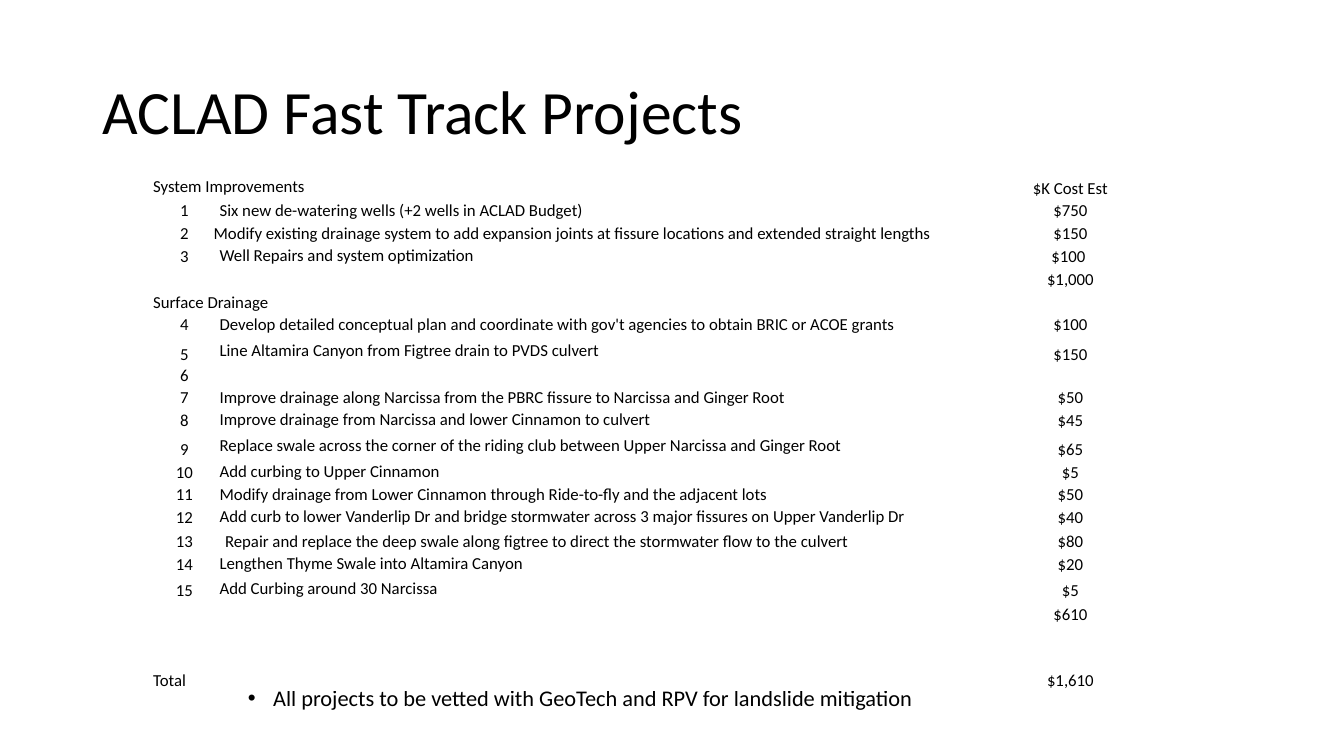
from lxml import etree
from pptx import Presentation
from pptx.dml.color import RGBColor
from pptx.enum.text import MSO_ANCHOR, MSO_AUTO_SIZE, PP_ALIGN
from pptx.oxml import parse_xml
from pptx.oxml.ns import nsdecls, qn
from pptx.util import Pt

LEFT, CENTER = PP_ALIGN.LEFT, PP_ALIGN.CENTER
TOP, MIDDLE, BOTTOM = MSO_ANCHOR.TOP, MSO_ANCHOR.MIDDLE, MSO_ANCHOR.BOTTOM
NO_AUTOFIT = MSO_AUTO_SIZE.NONE

COLUMN_WIDTHS = [13.7, 18.7, 584.6, 77.8]
INDENT = 15.8
EDGE = 0.7

# Each row: height, heading, number, project, cost
ROWS = [
    (17.3, "System Improvements", "", "", "$K Cost Est"),
    (16.3, "", "1", "Six new de-watering wells (+2 wells in ACLAD Budget)", "$750"),
    (16.3, "", "2", "Modify existing drainage system to add expansion joints at fissure "
                    "locations and extended straight lengths", "$150"),
    (16.4, "", "3", "Well Repairs and system optimization", "$100 "),
    (16.4, "", "", "", "$1,000"),
    (16.4, "Surface Drainage", "", "", ""),
    (15.8, "", "4", "Develop detailed conceptual plan and coordinate with gov't agencies "
                    "to obtain BRIC or ACOE grants", "$100"),
    (21.2, "", "5", "Line Altamira Canyon from Figtree drain to PVDS culvert", "$150"),
    (15.2, "", "6", "", ""),
    (15.9, "", "7", "Improve drainage along Narcissa from the PBRC fissure to Narcissa "
                    "and Ginger Root", "$50"),
    (15.9, "", "8", "Improve drainage from Narcissa and lower Cinnamon to culvert", "$45"),
    (21.2, "", "9", "Replace swale across the corner of the riding club between Upper "
                    "Narcissa and Ginger Root", "$65"),
    (16.2, "", "10", "Add curbing to Upper Cinnamon", "$5"),
    (16, "", "11", "Modify drainage from Lower Cinnamon through Ride-to-fly and the "
                   "adjacent lots", "$50"),
    (16.2, "", "12", "Add curb to lower Vanderlip Dr and bridge stormwater across 3 major "
                     "fissures on Upper Vanderlip Dr", "$40"),
    (17, "", "13", "Repair and replace the deep swale along figtree to direct the "
                   "stormwater flow to the culvert", "$80"),
    (16.4, "", "14", "Lengthen Thyme Swale into Altamira Canyon", "$20"),
    (19.1, "", "15", "Add Curbing around 30 Narcissa", "$5"),
    (16.8, "", "", "", "$610"),
    (32, "", "", "", ""),
    (15.2, "Total", "", "", "$1,610"),
]
HEADING_SPANS = {"System Improvements": 3, "Surface Drainage": 3, "Total": 2}
# Projects set on the bottom of the row with an indent of their own
OWN_INDENTS = {"2": 11.5, "13": 19.7}


def color(hex_string):
    return RGBColor.from_string(hex_string)


class ProjectSlide:
    font = "Calibri"
    ink = "000000"
    paper = "FFFFFF"

    def __init__(self, deck):
        self.page = deck.slides.add_slide(deck.slide_layouts[5])

    def add_text(self, frame, text, size, align=LEFT, spacing=None):
        para = frame.paragraphs[0]
        para.alignment = align
        para.line_spacing = spacing
        span = para.add_run()
        span.text = text
        span.font.name = self.font
        span.font.size = Pt(size)
        span.font.color.rgb = color(self.ink)
        return para

    def title(self, text, left, top, width, height):
        box = self.page.shapes.title
        box.left, box.top, box.width, box.height = map(Pt, (left, top, width, height))
        box.text_frame.auto_size = NO_AUTOFIT
        box.text_frame.word_wrap = True
        box.text_frame.vertical_anchor = MIDDLE
        self.add_text(box.text_frame, text, 44, spacing=0.9)

    def bullet(self, text, left, top, width, height):
        box = self.page.shapes.add_textbox(*map(Pt, (left, top, width, height)))
        box.text_frame.word_wrap = True
        box.text_frame.vertical_anchor = TOP
        para = self.add_text(box.text_frame, text, 16, spacing=0.9)
        properties = para._p.get_or_add_pPr()
        properties.set("marL", str(Pt(18)))
        properties.set("indent", str(-Pt(18)))
        etree.SubElement(properties, qn("a:buFont")).set("typeface", "Arial")
        etree.SubElement(properties, qn("a:buChar")).set("char", "•")

    def cell(self, cell, text, align=LEFT, anchor=BOTTOM, indent=EDGE):
        cell.margin_left = Pt(indent)
        cell.margin_top = cell.margin_right = Pt(EDGE)
        cell.margin_bottom = 0
        cell.vertical_anchor = anchor
        cell.fill.solid()
        cell.fill.fore_color.rgb = color(self.paper)
        for place, side in enumerate(("lnL", "lnR", "lnT", "lnB")):
            cell._tc.tcPr.insert(place, parse_xml(
                f'<a:{side} {nsdecls("a")} w="{Pt(1)}"><a:solidFill>'
                f'<a:srgbClr val="{self.paper}"/></a:solidFill></a:{side}>'))
        if text:
            self.add_text(cell.text_frame, text, 12, align)
        else:
            para = cell.text_frame.paragraphs[0]._p
            etree.SubElement(para, qn("a:endParaRPr")).set("sz", "1200")

    def cost_table(self, left, top):
        width, height = sum(COLUMN_WIDTHS), sum(row[0] for row in ROWS)
        table = self.page.shapes.add_table(
            len(ROWS), len(COLUMN_WIDTHS), *map(Pt, (left, top, width, height))).table
        table.first_row = table.horz_banding = False
        for column, column_width in zip(table.columns, COLUMN_WIDTHS):
            column.width = Pt(column_width)
        for index, (row_height, heading, number, project, cost) in enumerate(ROWS):
            table.rows[index].height = Pt(row_height)
            cells = [table.cell(index, column) for column in range(len(COLUMN_WIDTHS))]
            self.cell(cells[0], heading, anchor=BOTTOM if index else MIDDLE)
            self.cell(cells[1], number, CENTER)
            self.cell(cells[2], project, LEFT,
                      BOTTOM if number in OWN_INDENTS else MIDDLE,
                      OWN_INDENTS.get(number, INDENT))
            self.cell(cells[3], cost, CENTER)
            if heading:
                cells[0].merge(cells[HEADING_SPANS[heading] - 1])


def main():
    deck = Presentation()
    deck.slide_width, deck.slide_height = Pt(960), Pt(540)
    slide = ProjectSlide(deck)
    slide.title("ACLAD Fast Track Projects", 66, 29.5, 738, 104.4)
    slide.bullet("All projects to be vetted with GeoTech and RPV for landslide mitigation",
                 170, 487.4, 634.3, 31)
    slide.cost_table(108.7, 124.6)
    deck.save("out.pptx")


if __name__ == "__main__":
    main()
